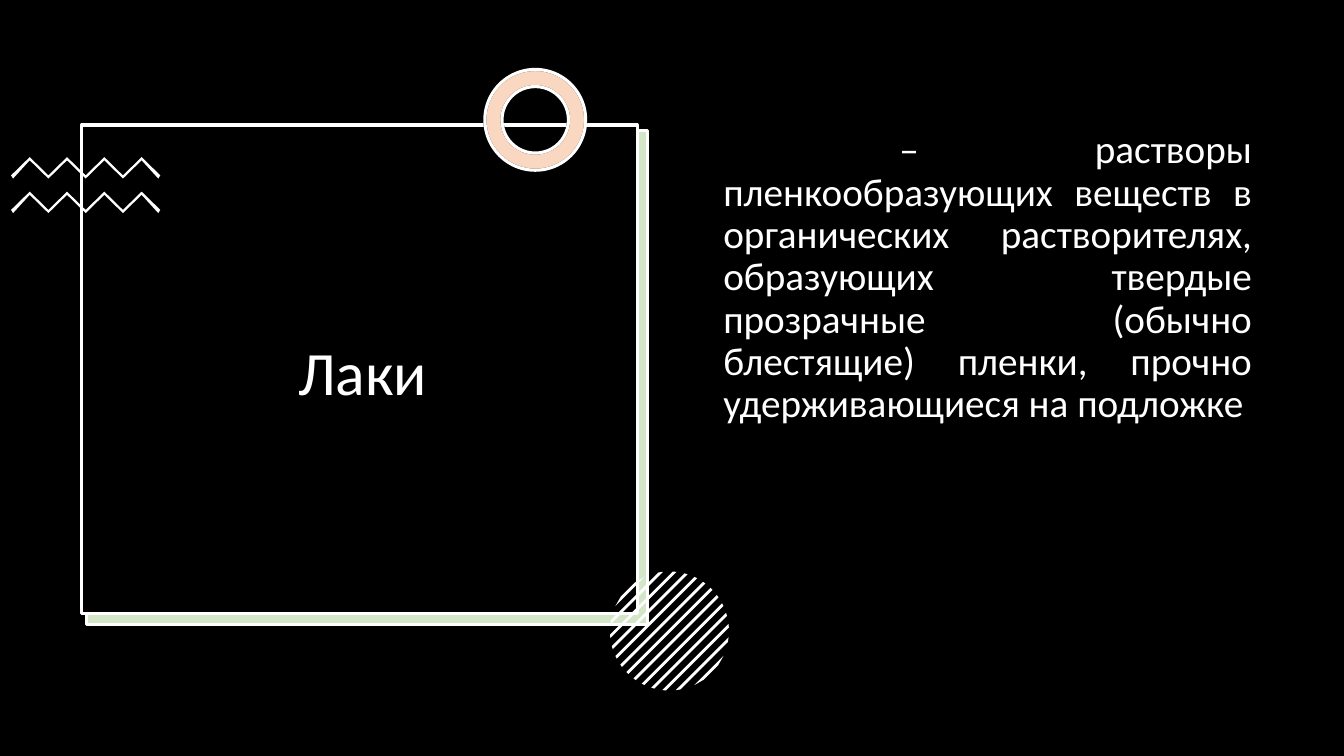
from dataclasses import dataclass
from math import sqrt

from lxml.etree import SubElement
from pptx import Presentation
from pptx.dml.color import RGBColor
from pptx.enum.shapes import MSO_SHAPE
from pptx.enum.text import MSO_ANCHOR, PP_ALIGN
from pptx.oxml.ns import qn
from pptx.shapes.autoshape import Shape
from pptx.shapes.shapetree import GroupShapes, SlideShapes
from pptx.slide import Slide
from pptx.util import Cm, Pt

WHITE = "FFFFFF"
BLACK = "000000"
GREEN = "70AD47"
ORANGE = "ED7D31"
WIDTH, HEIGHT = 33.87, 19.05

Point = tuple[float, float]


@dataclass
class Box:
    left: float
    top: float
    width: float
    height: float

    def place(self) -> tuple[Cm, Cm, Cm, Cm]:
        return Cm(self.left), Cm(self.top), Cm(self.width), Cm(self.height)


@dataclass
class Form:
    kind: MSO_SHAPE
    box: Box
    fill: str
    line: str = ""
    alpha: int = 100


@dataclass
class Label:
    text: str
    box: Box
    size: int
    align: PP_ALIGN
    anchor: MSO_ANCHOR
    before: int = 0


def color(code: str) -> RGBColor:
    return RGBColor.from_string(code)


def paint(shape: Shape, fill: str, line: str = "", alpha: int = 100) -> None:
    shape.shadow.inherit = False
    shape.fill.solid()
    shape.fill.fore_color.rgb = color(fill)
    if alpha < 100:
        tint = shape.fill._xPr.find(qn("a:solidFill"))[0]
        SubElement(tint, qn("a:alpha"), val=str(alpha * 1000))
    if line:
        shape.line.color.rgb = color(line)
        shape.line.width = Pt(2.25)
    else:
        shape.line.fill.background()


def draw_form(shapes: SlideShapes, form: Form) -> None:
    shape = shapes.add_shape(form.kind, *form.box.place())
    if form.kind == MSO_SHAPE.DONUT:
        shape.adjustments[0] = 0.17
    paint(shape, form.fill, form.line, form.alpha)


def draw_path(shapes: GroupShapes, points: list[Point]) -> None:
    start, *rest = [(Cm(x), Cm(y)) for x, y in points]
    pen = shapes.build_freeform(*start)
    pen.add_line_segments(rest, close=True)
    paint(pen.convert_to_shape(), WHITE)


def draw_waves(slide: Slide) -> None:
    left, step, depth, thick, trim = 0.28, 0.47, 0.46, 0.08, 0.05
    right = left + 8 * step
    group = slide.shapes.add_group_shape().shapes
    for top in (3.96, 4.83):
        upper = [(left + i * step, top + depth * (1 - i % 2)) for i in range(9)]
        lower = [
            (min(max(x, left + trim), right - trim), y + thick)
            for x, y in reversed(upper)
        ]
        draw_path(group, upper + lower)


def chord(shift: float) -> list[Point]:
    mid_x, mid_y, radius = 16.87, 15.9, 1.5
    half = sqrt(radius**2 - shift**2 / 2) / sqrt(2)
    x, y = mid_x + shift / 2, mid_y + shift / 2
    return [(x - half, y + half), (x + half, y - half)]


def draw_stripes(slide: Slide) -> None:
    step, half = 0.34, 0.05
    group = slide.shapes.add_group_shape().shapes
    for i in range(-6, 7):
        draw_path(group, chord(i * step - half) + chord(i * step + half)[::-1])


def draw_label(slide: Slide, label: Label) -> None:
    frame = slide.shapes.add_textbox(*label.box.place()).text_frame
    frame.word_wrap = True
    frame.vertical_anchor = label.anchor
    frame.text = label.text
    for para in frame.paragraphs:
        para.alignment = label.align
        para.line_spacing = 0.9
        para.space_before = Pt(label.before)
        for run in para.runs:
            run.font.name = "Calibri"
            run.font.size = Pt(label.size)
            run.font.color.rgb = color(WHITE)


RECT = MSO_SHAPE.RECTANGLE
RING = Box(12.22, 1.75, 2.54, 2.54)

PANELS = [
    Form(RECT, Box(0, 0, WIDTH, HEIGHT), BLACK),
    Form(RECT, Box(2.16, 3.3, 14.15, 12.45), WHITE),
    Form(RECT, Box(2.18, 3.28, 14.15, 12.45), GREEN, WHITE, 30),
    Form(RECT, Box(2.06, 3.15, 14, 12.32), BLACK, WHITE),
]
RINGS = [
    Form(MSO_SHAPE.DONUT, RING, WHITE, BLACK),
    Form(MSO_SHAPE.DONUT, RING, ORANGE, WHITE, 30),
]
LABELS = [
    Label("Лаки", Box(2.34, 3.86, 13.61, 11.23), 44,
          PP_ALIGN.CENTER, MSO_ANCHOR.MIDDLE),
    Label(" – растворы пленкообразующих веществ в органических "
          "растворителях, образующих твердые прозрачные (обычно блестящие) "
          "пленки, прочно удерживающиеся на подложке",
          Box(17.98, 3.15, 13.82, 12.09), 28,
          PP_ALIGN.JUSTIFY, MSO_ANCHOR.TOP, 10),
]


def main() -> None:
    deck = Presentation()
    deck.slide_width, deck.slide_height = Cm(WIDTH), Cm(HEIGHT)
    slide = deck.slides.add_slide(deck.slide_layouts[6])
    for panel in PANELS:
        draw_form(slide.shapes, panel)
    draw_waves(slide)
    for ring in RINGS:
        draw_form(slide.shapes, ring)
    draw_stripes(slide)
    for label in LABELS:
        draw_label(slide, label)
    deck.save("out.pptx")


if __name__ == "__main__":
    main()
